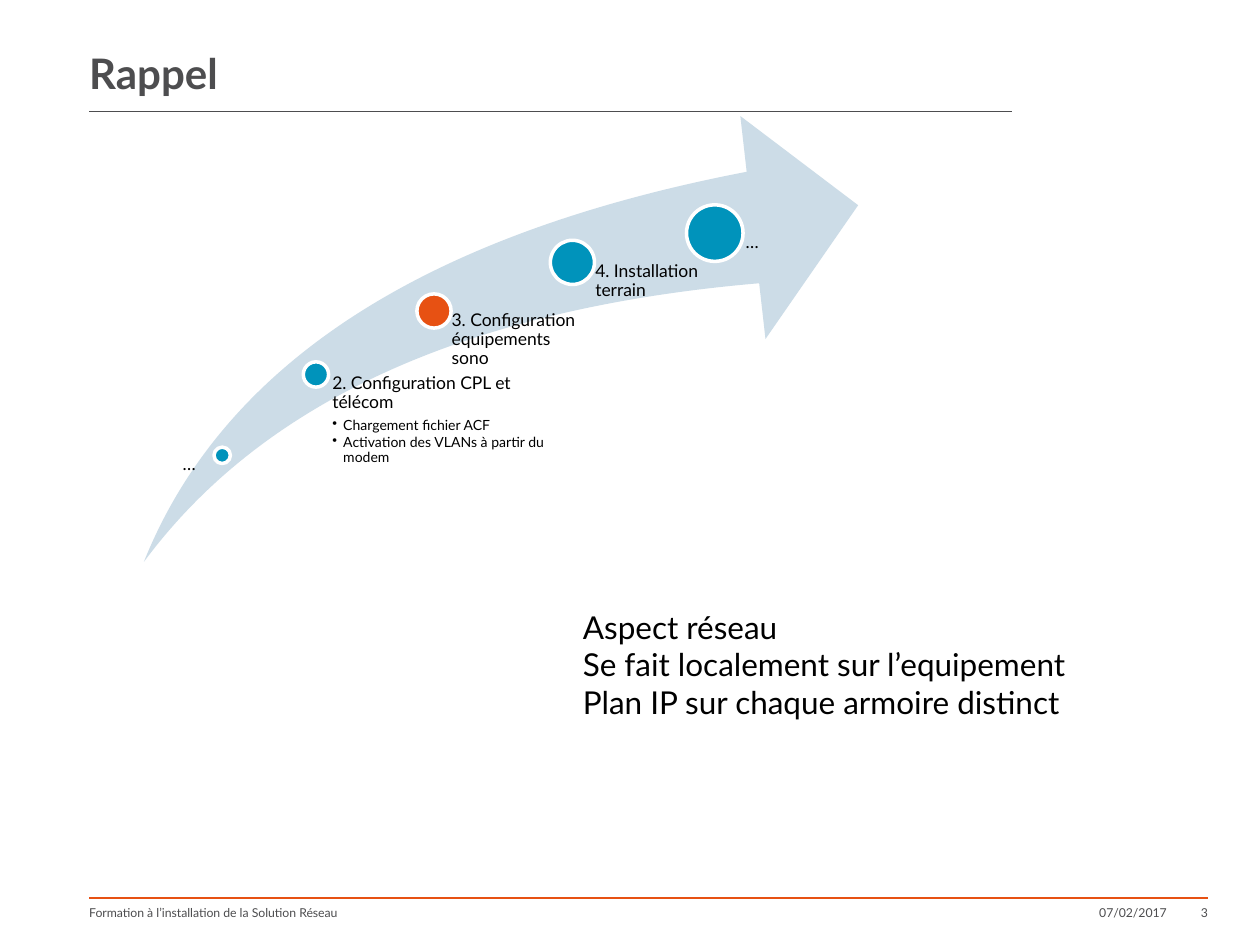
from dataclasses import dataclass

from pptx import Presentation
from pptx import util as u
from pptx.dml.color import RGBColor
from pptx.enum import shapes, text
from pptx.oxml.ns import qn
from lxml import etree


@dataclass(frozen=True)
class Theme:
    font: str = "Lato"
    ink: str = "000000"
    grey: str = "4D4D4F"
    blue: str = "0093BB"
    orange: str = "E75113"
    pale: str = "CCDCE7"
    white: str = "FFFFFF"
    title: float = 24
    body: float = 18
    step: float = 10
    detail: float = 8
    footer: float = 7


class SlideBuilder:
    """Holds the theme and the current slide."""

    def __init__(self, slide, theme):
        self.slide = slide
        self.theme = theme

    def rule(self, left, right, y, color, width):
        line = self.slide.shapes.add_connector(
            shapes.MSO_CONNECTOR.STRAIGHT, u.Cm(left), u.Cm(y), u.Cm(right), u.Cm(y))
        line.line.color.rgb = RGBColor.from_string(color)
        line.line.width = u.Pt(width)
        etree.SubElement(line._element.spPr, qn("a:effectLst"))

    def shape(self, kind, box, fill, outline=None, adjustments=()):
        item = self.slide.shapes.add_shape(kind, *map(u.Cm, box))
        item.shadow.inherit = False
        item.fill.solid()
        item.fill.fore_color.rgb = RGBColor.from_string(fill)
        if outline:
            item.line.color.rgb = RGBColor.from_string(outline)
            item.line.width = u.Pt(2)
        else:
            item.line.fill.background()
        for index, value in enumerate(adjustments):
            item.adjustments[index] = value

    def text(self, box, lines, size, color, insets=(0, 0, 0, 0), bold=False,
             **paragraph_format):
        frame = self.slide.shapes.add_textbox(*map(u.Cm, box)).text_frame
        frame.word_wrap = True
        for side, inset in zip(("left", "top", "right", "bottom"), insets):
            setattr(frame, f"margin_{side}", u.Cm(inset))
        for index, line in enumerate(lines):
            paragraph = frame.paragraphs[0] if index == 0 else frame.add_paragraph()
            self.fill_paragraph(paragraph, line, size, color, bold, **paragraph_format)
        return frame

    def fill_paragraph(self, paragraph, line, size, color, bold=False, **paragraph_format):
        for name, value in paragraph_format.items():
            setattr(paragraph, name, value)
        run = paragraph.add_run()
        run.text = line
        font_format = {"name": self.theme.font, "size": u.Pt(size), "bold": bold}
        for name, value in font_format.items():
            setattr(run.font, name, value)
        run.font.color.rgb = RGBColor.from_string(color)

    def bullet(self, frame, line, size, color, indent):
        paragraph = frame.add_paragraph()
        properties = paragraph._p.get_or_add_pPr()
        properties.set("marL", str(u.Cm(indent)))
        properties.set("indent", str(-u.Cm(indent)))
        etree.SubElement(properties, qn("a:buChar"), char="•")
        self.fill_paragraph(paragraph, line, size, color,
                            line_spacing=0.9, space_after=u.Pt(0.15 * size))

    def step(self, center, diameter, fill, text_left, text_width, bottom, label):
        x, y = center
        radius = diameter / 2
        self.shape(shapes.MSO_SHAPE.OVAL, (x - radius, y - radius, diameter, diameter),
                   fill, self.theme.white)
        return self.text((text_left, y, text_width, bottom - y), [label],
                         self.theme.step, self.theme.ink, (0.53 * diameter, 0, 0, 0),
                         line_spacing=0.9, space_after=u.Pt(0.35 * self.theme.step))


def main():
    theme = Theme()
    deck = Presentation()
    deck.slide_width, deck.slide_height = u.Cm(25.4), u.Cm(19.05)
    page = SlideBuilder(deck.slides.add_slide(deck.slide_layouts[6]), theme)
    margin = 1.8

    # Title and rules
    page.rule(margin, 20.4, 2.25, theme.grey, 0.75)
    page.rule(margin, 24.35, 18.1, theme.orange, 1.5)
    title = page.text((margin, 0, 18.6, 1.98), ["Rappel"], theme.title, theme.grey, bold=True)
    title.vertical_anchor = text.MSO_ANCHOR.BOTTOM

    # Footer
    right = text.PP_ALIGN.RIGHT
    for left, width, line, alignment in (
            (16.5, 7.02, "07/02/2017", right),
            (margin, 14.5, "Formation à l’installation de la Solution Réseau", None),
            (23.5, 0.85, "3", right)):
        page.text((left, 18.24, width, 0.81), [line], theme.footer, theme.grey,
                  alignment=alignment)

    # Rising arrow with its steps
    arrow_top, arrow_height = 2.34, 8.99
    page.shape(shapes.MSO_SHAPE.SWOOSH_ARROW, (2.9, arrow_top, 14.4, arrow_height),
               theme.pale, adjustments=(0.25, 0.25))
    steps = (
        ((4.48, 9.18), 0.33, theme.blue, 3.51, 3.73, "…"),
        ((6.37, 7.55), 0.51, theme.blue, 6.43, 5.08, "2. Configuration CPL et télécom"),
        ((8.75, 6.27), 0.69, theme.orange, 8.74, 3.07, "3. Configuration équipements sono"),
        ((11.54, 5.29), 0.89, theme.blue, 11.53, 2.87, "4. Installation terrain"),
        ((14.41, 4.7), 1.14, theme.blue, 14.43, 2.87, "…"),
    )
    details = {1: ("Chargement fichier ACF", "Activation des VLANs à partir du modem")}
    for index, (center, diameter, fill, left, width, label) in enumerate(steps):
        frame = page.step(center, diameter, fill, left, width,
                          arrow_top + arrow_height, label)
        for line in details.get(index, ()):
            page.bullet(frame, line, theme.detail, theme.ink, 0.22)

    # Network remarks
    remarks = page.text(
        (11.5, 12.12, 11.6, 2.57),
        ["Aspect réseau", "Se fait localement sur l’equipement",
         "Plan IP sur chaque armoire distinct"],
        theme.body, theme.ink, (0.25, 0.13, 0.25, 0.13))
    remarks.auto_size = text.MSO_AUTO_SIZE.SHAPE_TO_FIT_TEXT

    deck.save("out.pptx")


if __name__ == "__main__":
    main()
